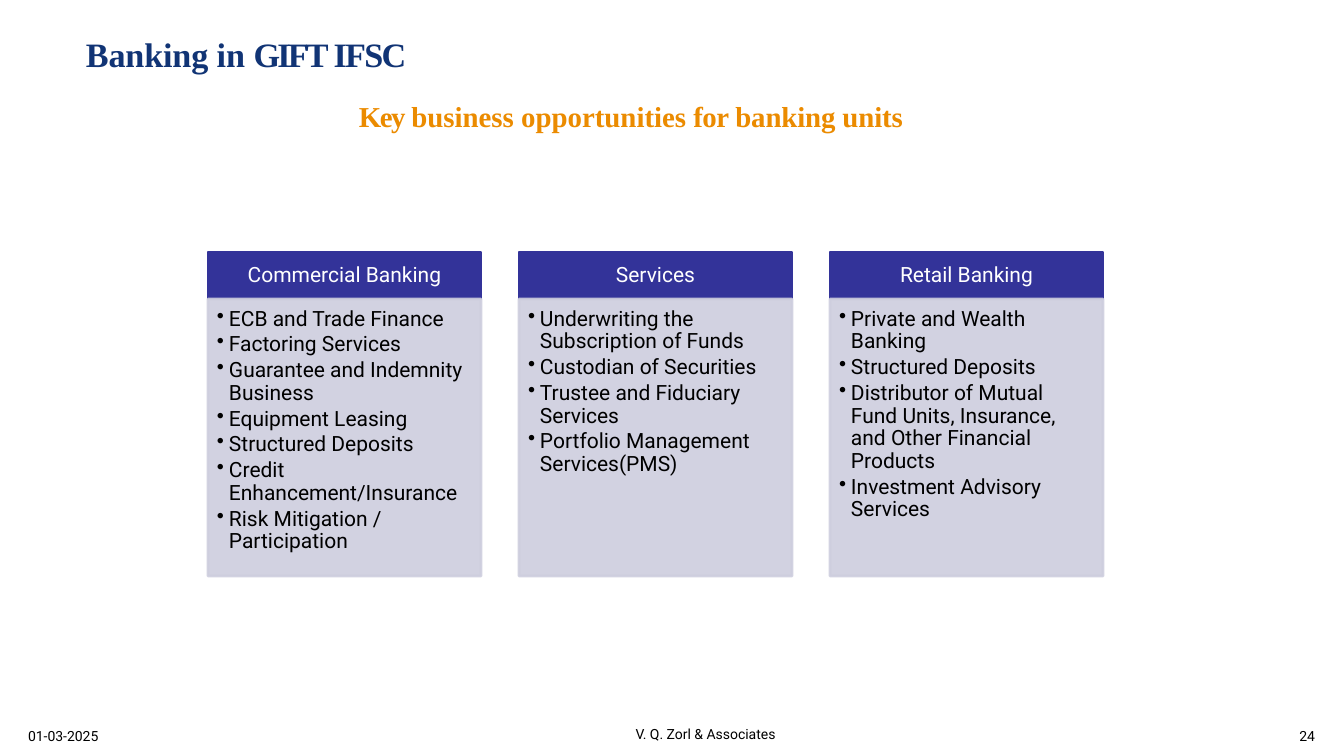
from lxml.etree import SubElement
from pptx import Presentation
from pptx.dml.color import RGBColor
from pptx.enum.shapes import MSO_SHAPE as Preset
from pptx.enum.text import MSO_ANCHOR as Anchor, MSO_AUTO_SIZE as AutoSize, PP_ALIGN as Align
from pptx.oxml.ns import qn
from pptx.util import Emu, Pt

EMU_PER_PX = 12192000 / 1344

NAVY = RGBColor(0x11, 0x34, 0x75)
ORANGE = RGBColor(0xEB, 0x8B, 0x00)
INDIGO = RGBColor(0x33, 0x33, 0x99)
LAVENDER = RGBColor(0xCE, 0xCE, 0xDE)
WHITE = RGBColor(0xFF, 0xFF, 0xFF)
BLACK = RGBColor(0x00, 0x00, 0x00)

SERIF = "Times New Roman"
SANS = "Roboto"

# Runs are (text, letter spacing in points)
TITLE = [("Banking ", -0.1), ("in ", 0), ("GIFT ", -2), ("IFSC", -1.2)]
SUBTITLE = [("Key ", -1.1), ("business opportunities", 0), (" for ", -0.4), ("banking units", -0.1)]

CARDS = {
    "Commercial Banking": [
        "ECB and Trade Finance",
        "Factoring Services",
        "Guarantee and Indemnity Business",
        "Equipment Leasing",
        "Structured Deposits",
        "Credit Enhancement/Insurance",
        "Risk Mitigation / Participation",
    ],
    "Services": [
        "Underwriting the Subscription of Funds",
        "Custodian of Securities",
        "Trustee and Fiduciary Services",
        "Portfolio Management Services(PMS)",
    ],
    "Retail Banking": [
        "Private and Wealth Banking",
        "Structured Deposits",
        "Distributor of Mutual Fund Units, Insurance, and Other Financial Products",
        "Investment Advisory Services",
    ],
}
CARD_LEFT, CARD_TOP, CARD_WIDTH, CARD_PITCH = 208, 252, 273, 311
HEADER_HEIGHT, PANEL_HEIGHT = 47, 277
BULLET_INDENT = 12


def px(length):
    return Emu(round(length * EMU_PER_PX))


def add_bullet(paragraph):
    properties = paragraph._p.get_or_add_pPr()
    properties.set("marL", str(px(BULLET_INDENT)))
    properties.set("indent", str(-px(BULLET_INDENT)))
    SubElement(properties, qn("a:buChar"), char="•")


def write_text(shape, paragraphs, size, color, font=SANS, bold=False, align=Align.LEFT,
               anchor=Anchor.TOP, insets=(10, 5, 10, 5), line_spacing=1.0,
               space_after=0, bullets=False):
    """Fill a shape with paragraphs, each a string or a list of (text, letter spacing) runs."""
    frame = shape.text_frame
    frame.word_wrap = True
    frame.auto_size = AutoSize.NONE
    frame.vertical_anchor = anchor
    (frame.margin_left, frame.margin_top,
     frame.margin_right, frame.margin_bottom) = map(px, insets)
    for index, content in enumerate(paragraphs):
        paragraph = frame.add_paragraph() if index else frame.paragraphs[0]
        paragraph.alignment = align
        paragraph.line_spacing = line_spacing
        paragraph.space_after = Pt(space_after)
        if bullets:
            add_bullet(paragraph)
        runs = [(content, 0)] if isinstance(content, str) else content
        for text, letter_spacing in runs:
            run = paragraph.add_run()
            run.text = text
            run.font.name = font
            run.font.size = Pt(size)
            run.font.bold = bold
            run.font.color.rgb = color
            if letter_spacing:
                run.font._element.set("spc", str(round(letter_spacing * 100)))


def add_text_box(slide, box, paragraphs, **text_format):
    text_box = slide.shapes.add_textbox(*map(px, box))
    write_text(text_box, paragraphs, **text_format)


def add_rectangle(slide, box, color, opacity=100):
    rectangle = slide.shapes.add_shape(Preset.RECTANGLE, *map(px, box))
    rectangle.shadow.inherit = False
    rectangle.fill.solid()
    rectangle.fill.fore_color.rgb = color
    rectangle.line.color.rgb = color
    rectangle.line.width = Pt(2)
    if opacity < 100:
        for rgb in rectangle._element.spPr.iter(qn("a:srgbClr")):
            SubElement(rgb, qn("a:alpha"), val=str(opacity * 1000))
    return rectangle


def add_card(slide, left, heading, items):
    header = add_rectangle(slide, (left, CARD_TOP, CARD_WIDTH, HEADER_HEIGHT), INDIGO)
    write_text(header, [heading], size=15, color=WHITE, align=Align.CENTER,
               anchor=Anchor.MIDDLE, insets=(12, 7, 12, 7), line_spacing=0.9)
    panel = add_rectangle(slide, (left, CARD_TOP + HEADER_HEIGHT, CARD_WIDTH, PANEL_HEIGHT),
                          LAVENDER, opacity=90)
    write_text(panel, items, size=15, color=BLACK, insets=(9, 9, 12, 13),
               line_spacing=0.9, space_after=2.2, bullets=True)


def add_title(slide):
    title = slide.shapes.title
    title.left, title.top, title.width, title.height = map(px, (84, 29, 329, 44))
    write_text(title, [TITLE], size=24.4, color=NAVY, font=SERIF, bold=True, insets=(2, 4, 0, 0))


def add_footer(slide):
    for box, text, align in (
        ((18, 699, 98, 50), "01-03-2025", Align.LEFT),
        ((493, 697, 425, 50), "V. Q. Zorl & Associates", Align.CENTER),
        ((1277, 699, 48, 50), "24", Align.RIGHT),
    ):
        add_text_box(slide, box, [text], size=10, color=BLACK, align=align, anchor=Anchor.BOTTOM)


def main():
    presentation = Presentation()
    presentation.slide_width, presentation.slide_height = px(1344), px(756)
    title_only = presentation.slide_layouts[5]
    slide = presentation.slides.add_slide(title_only)
    add_title(slide)
    add_text_box(slide, (357, 95, 552, 36), [SUBTITLE], size=20.6, color=ORANGE,
                 font=SERIF, bold=True, insets=(2, 4, 0, 0))
    for column, (heading, items) in enumerate(CARDS.items()):
        add_card(slide, CARD_LEFT + column * CARD_PITCH, heading, items)
    add_footer(slide)
    presentation.save("out.pptx")


if __name__ == "__main__":
    main()
